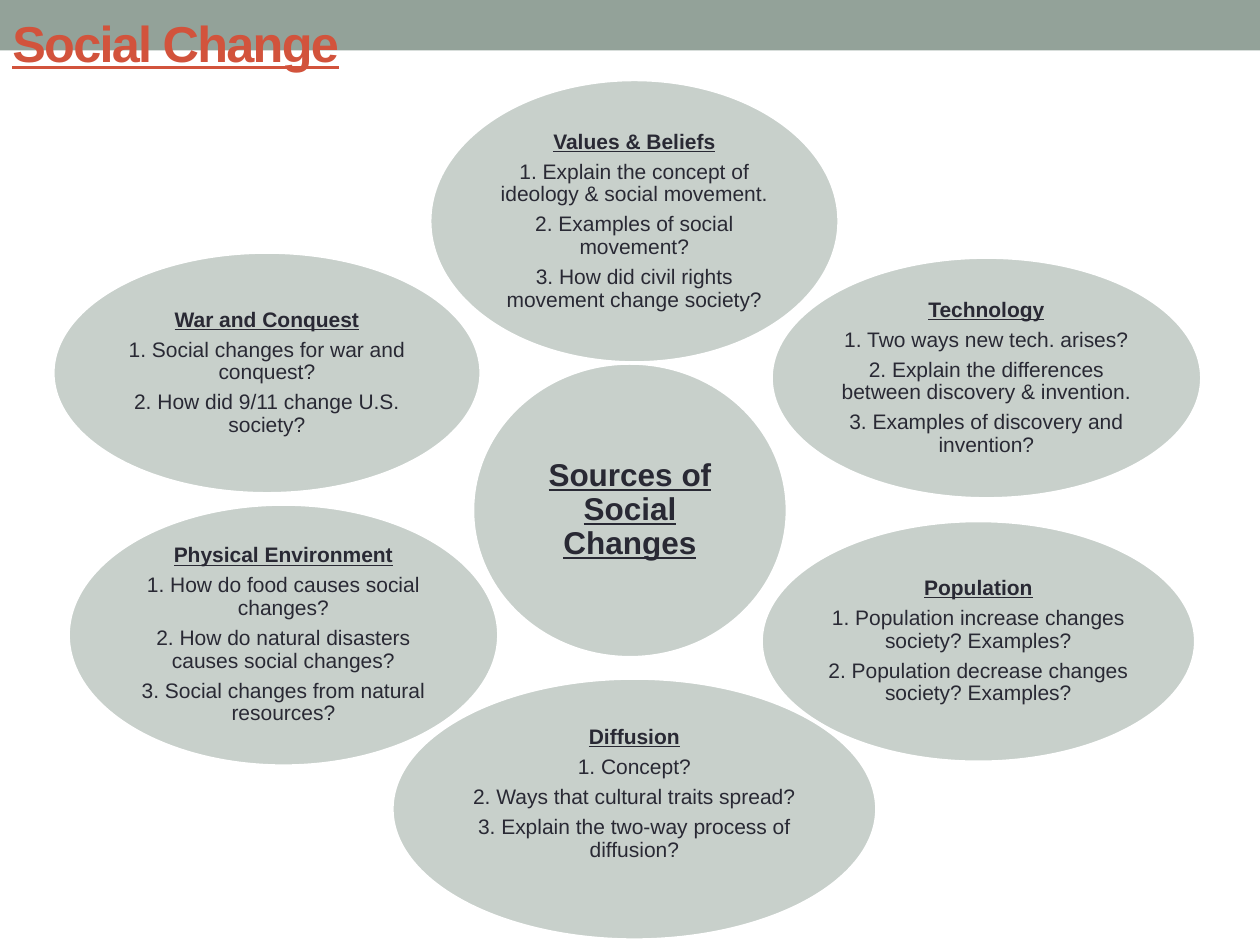
from dataclasses import dataclass

from lxml.etree import SubElement
from pptx import Presentation
from pptx.dml.color import RGBColor
from pptx.enum.shapes import MSO_SHAPE
from pptx.enum.text import MSO_ANCHOR, PP_ALIGN
from pptx.oxml.ns import qn
from pptx.util import Pt


@dataclass(frozen=True)
class Theme:
    font: str = "Arial"
    sage: RGBColor = RGBColor(0x93, 0xA2, 0x99)
    white: RGBColor = RGBColor(0xFF, 0xFF, 0xFF)
    ink: RGBColor = RGBColor(0x29, 0x29, 0x34)
    accent: RGBColor = RGBColor(0xD2, 0x53, 0x3C)
    title_size: float = 28.8
    hub_size: float = 18
    body_size: float = 12
    outline: float = 2.08
    inset: float = 1.5
    line_spacing: float = 0.9
    space_after: float = 0.35  # share of the type size
    opacity: int = 50  # percent


@dataclass(frozen=True)
class Bubble:
    left: float
    top: float
    width: float
    height: float
    heading: str
    questions: tuple[str, ...] = ()
    size: float = 12
    extra_bottom: float = 0


THEME = Theme()

BUBBLES = (
    Bubble(270, 207.4, 180, 168.5, "Sources of Social Changes", size=THEME.hub_size),
    Bubble(245.5, 45.4, 234, 162, "Values & Beliefs", (
        "1. Explain the concept of ideology & social movement.",
        "2. Examples of social movement?",
        "3. How did civil rights movement change society?")),
    Bubble(440.6, 146.9, 246.2, 138.2, "Technology", (
        "1. Two ways new tech. arises?",
        "2. Explain the differences between discovery & invention.",
        "3. Examples of discovery and invention?")),
    Bubble(434.9, 297.4, 248.4, 138.2, "Population", (
        "1. Population increase changes society? Examples?",
        "2. Population decrease changes society? Examples?")),
    Bubble(223.9, 387.4, 277.2, 149.8, "Diffusion", (
        "1. Concept?",
        "2. Ways that cultural traits spread?",
        "3. Explain the two-way process of diffusion?"), extra_bottom=17),
    Bubble(38.9, 288, 246.2, 149.8, "Physical Environment", (
        "1. How do food causes social changes?",
        "2. How do natural disasters causes social changes?",
        "3. Social changes from natural resources?")),
    Bubble(30.2, 144, 244.8, 138.2, "War and Conquest", (
        "1. Social changes for war and conquest?",
        "2. How did 9/11 change U.S. society?")),
)


def add_span(para, text: str, size: float, color: RGBColor, heading: bool):
    span = para.add_run()
    span.text = text
    font = span.font
    font.name, font.size = THEME.font, Pt(size)
    font.bold = font.underline = heading
    font.color.rgb = color
    return span


def add_filled_shape(page, kind, left: float, top: float, width: float, height: float):
    shape = page.shapes.add_shape(kind, Pt(left), Pt(top), Pt(width), Pt(height))
    shape.shadow.inherit = False
    shape.fill.solid()
    shape.fill.fore_color.rgb = THEME.sage
    shape.line.fill.background()
    return shape


def add_title(page, text: str) -> None:
    box = page.shapes.add_textbox(Pt(0), Pt(12.2), Pt(648), Pt(23.8))
    frame = box.text_frame
    frame.word_wrap = True
    frame.vertical_anchor = MSO_ANCHOR.MIDDLE
    span = add_span(frame.paragraphs[0], text, THEME.title_size, THEME.accent, True)
    span.font._element.set("spc", "-100")  # tightened by one point


def add_bubble(page, bubble: Bubble) -> None:
    shape = add_filled_shape(page, MSO_SHAPE.OVAL, bubble.left, bubble.top,
                             bubble.width, bubble.height)
    shape.line.color.rgb = THEME.white
    shape.line.width = Pt(THEME.outline)
    fill_color = shape._element.spPr.find(qn("a:solidFill"))[0]
    SubElement(fill_color, qn("a:alpha")).set("val", str(THEME.opacity * 1000))

    frame = shape.text_frame
    frame.word_wrap = True
    frame.vertical_anchor = MSO_ANCHOR.MIDDLE
    frame.margin_left = frame.margin_right = frame.margin_top = Pt(THEME.inset)
    frame.margin_bottom = Pt(THEME.inset + bubble.extra_bottom)
    for index, text in enumerate((bubble.heading, *bubble.questions)):
        para = frame.add_paragraph() if index else frame.paragraphs[0]
        para.alignment = PP_ALIGN.CENTER
        para.line_spacing = THEME.line_spacing
        para.space_after = Pt(bubble.size * THEME.space_after)
        add_span(para, text, bubble.size, THEME.ink, heading=index == 0)


def main() -> None:
    deck = Presentation()
    deck.slide_width, deck.slide_height = Pt(720), Pt(540)
    page = deck.slides.add_slide(deck.slide_layouts[6])

    # Header band and title
    add_filled_shape(page, MSO_SHAPE.RECTANGLE, 0, 0, 720, 28.8)
    add_title(page, "Social Change")

    # Central topic with its six sources
    for bubble in BUBBLES:
        add_bubble(page, bubble)

    deck.save("out.pptx")


if __name__ == "__main__":
    main()
